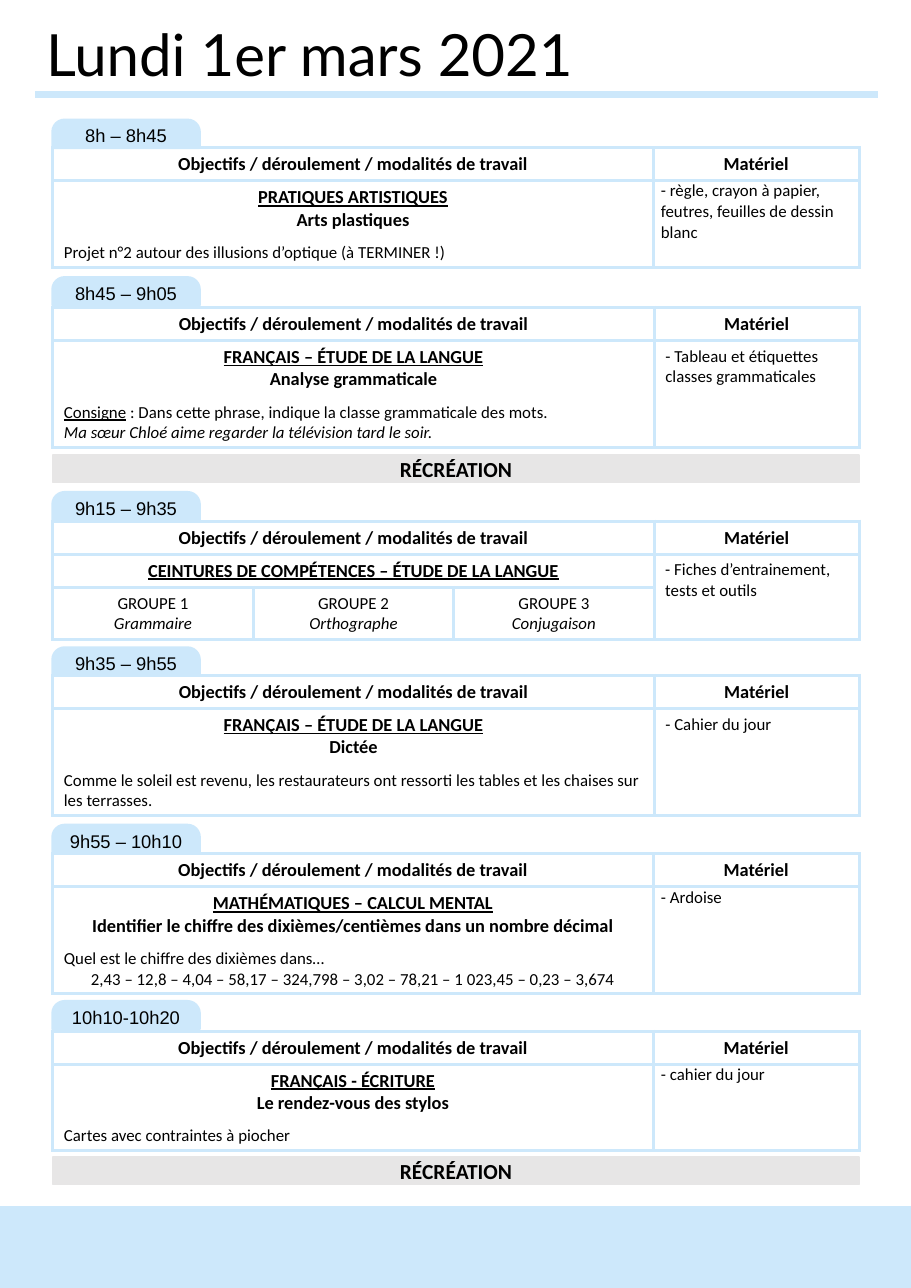
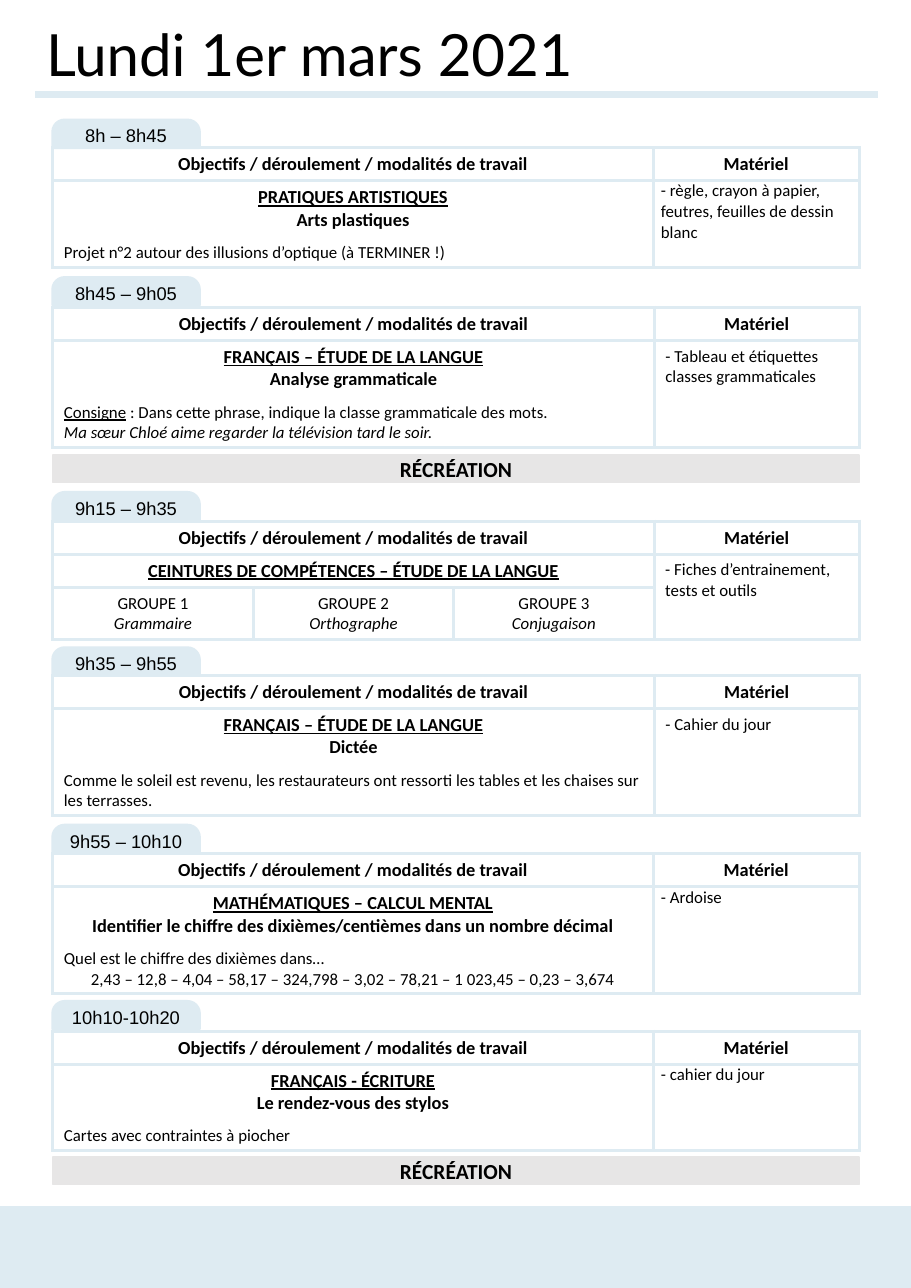
from lxml import etree
from pptx import Presentation
from pptx.dml.color import RGBColor
from pptx.enum.shapes import MSO_CONNECTOR, MSO_SHAPE
from pptx.enum.text import MSO_ANCHOR, MSO_AUTO_SIZE, PP_ALIGN
from pptx.oxml.ns import qn
from pptx.util import Inches, Pt

LEFT, CENTER = PP_ALIGN.LEFT, PP_ALIGN.CENTER
TOP, MIDDLE = MSO_ANCHOR.TOP, MSO_ANCHOR.MIDDLE
RECT, TAB = MSO_SHAPE.RECTANGLE, MSO_SHAPE.ROUND_2_SAME_RECTANGLE

COLORS = {"text": "000000", "paper": "FFFFFF", "break": "E7E6E6"}
ACCENTS = ["CDE8FB", "DEEBF2"]
PAGE_W, PAGE_H = 8.27, 11.69
MARGIN, CONTENT_W = 0.48, 7.32
BAR_H, TAB_W, HEADER_H = 0.25, 1.33, 0.3
GAP = 7.3

TITLE = "Lundi 1er mars 2021"
HEADINGS = ["Objectifs / déroulement / modalités de travail", "Matériel"]
BREAK_TEXT = "RÉCRÉATION"
BREAK_TOPS = [4.13, 10.5]

LESSONS = [
    {"time": "8h – 8h45", "tab": 1.09, "top": 1.34, "height": 1.08, "compact": True,
     "subject": "PRATIQUES ARTISTIQUES", "topic": "Arts plastiques",
     "body": [([("Projet n°2 autour des illusions d’optique (à TERMINER !)", "")], LEFT)],
     "material": "- règle, crayon à papier, feutres, feuilles de dessin blanc"},
    {"time": "8h45 – 9h05", "tab": 2.52, "top": 2.79, "height": 1.27, "compact": False,
     "subject": "FRANÇAIS – ÉTUDE DE LA LANGUE", "topic": "Analyse grammaticale",
     "body": [([("Consigne", "u"),
                (" : Dans cette phrase, indique la classe grammaticale des mots.", "")], LEFT),
              ([("Ma sœur Chloé aime regarder la télévision tard le soir.", "i")], LEFT)],
     "material": "- Tableau et étiquettes classes grammaticales"},
    {"time": "9h35 – 9h55", "tab": 5.88, "top": 6.13, "height": 1.27, "compact": False,
     "subject": "FRANÇAIS – ÉTUDE DE LA LANGUE", "topic": "Dictée",
     "body": [([("Comme le soleil est revenu, les restaurateurs ont ressorti les tables "
                 "et les chaises sur les terrasses.", "")], LEFT)],
     "material": "- Cahier du jour"},
    {"time": "9h55 – 10h10", "tab": 7.49, "top": 7.75, "height": 1.27, "compact": True,
     "subject": "MATHÉMATIQUES – CALCUL MENTAL",
     "topic": "Identifier le chiffre des dixièmes/centièmes dans un nombre décimal",
     "body": [([("Quel est le chiffre des dixièmes dans…", "")], LEFT),
              ([("2,43 – 12,8 – 4,04 – 58,17 – 324,798 – 3,02 – 78,21 – 1 023,45 – 0,23 – 3,674",
                 "")], CENTER)],
     "material": "- Ardoise"},
    {"time": "10h10-10h20", "tab": 9.09, "top": 9.36, "height": 1.08, "compact": True,
     "subject": "FRANÇAIS - ÉCRITURE", "topic": "Le rendez-vous des stylos",
     "body": [([("Cartes avec contraintes à piocher", "")], LEFT)],
     "material": "- cahier du jour"},
]

WORKSHOP = {"time": "9h15 – 9h35", "tab": 4.47, "top": 4.73,
            "subject": "CEINTURES DE COMPÉTENCES – ÉTUDE DE LA LANGUE",
            "groups": [("GROUPE 1", "Grammaire"), ("GROUPE 2", "Orthographe"),
                       ("GROUPE 3", "Conjugaison")],
            "material": "- Fiches d’entrainement, tests et outils"}


def rgb(color):
    return RGBColor.from_string(color)


def add_paragraph(tf, runs, size, align=LEFT, font="Calibri", before=0):
    p = tf.paragraphs[0]
    if p.runs:
        p = tf.add_paragraph()
    p.alignment = align
    p.space_before = Pt(before)
    for text, style in runs:
        r = p.add_run()
        r.text = text
        r.font.name = font
        r.font.size = Pt(size)
        r.font.color.rgb = rgb(COLORS["text"])
        r.font.bold = "b" in style
        r.font.italic = "i" in style
        r.font.underline = "u" in style


def add_block(slide, kind, box, color, line_width):
    sp = slide.shapes.add_shape(kind, *map(Inches, box))
    sp.shadow.inherit = False
    sp.fill.solid()
    sp.fill.fore_color.rgb = rgb(color)
    sp.line.color.rgb = rgb(color)
    sp.line.width = Pt(line_width)
    sp.text_frame.vertical_anchor = MIDDLE
    sp.text_frame.word_wrap = True
    return sp


def add_title(slide, left, top, accent):
    tb = slide.shapes.add_textbox(*map(Inches, (left, top, 6.26, 0.74)))
    tf = tb.text_frame
    tf.word_wrap = True
    tf.auto_size = MSO_AUTO_SIZE.SHAPE_TO_FIT_TEXT
    add_paragraph(tf, [(TITLE, "")], 38, font="Lato")
    y = Inches(top + 0.74)
    rule = slide.shapes.add_connector(
        MSO_CONNECTOR.STRAIGHT, Inches(left), y, Inches(left + 7.65), y)
    rule.line.color.rgb = rgb(accent)
    rule.line.width = Pt(4.75)
    etree.SubElement(rule.element.spPr, qn("a:effectLst"))


def add_time_tab(slide, top, time, accent):
    sp = add_block(slide, TAB, (MARGIN, top, TAB_W, BAR_H), accent, 2)
    sp.adjustments[0] = 0.428
    sp.adjustments[1] = 0
    add_paragraph(sp.text_frame, [(time, "")], 12, CENTER, "Arial")


def add_break(slide, top):
    sp = add_block(slide, RECT, (MARGIN, top, CONTENT_W, BAR_H), COLORS["break"], 1)
    add_paragraph(sp.text_frame, [(BREAK_TEXT, "b")], 14, CENTER)


def style_cell(cell, accent):
    cell.vertical_anchor = MIDDLE
    tcPr = cell._tc.get_or_add_tcPr()
    for side in ("lnL", "lnR", "lnT", "lnB"):
        ln = etree.SubElement(tcPr, qn(f"a:{side}"), w=str(Pt(2.25)))
        fill = etree.SubElement(ln, qn("a:solidFill"))
        etree.SubElement(fill, qn("a:srgbClr"), val=accent)
    cell.fill.solid()
    cell.fill.fore_color.rgb = rgb(COLORS["paper"])


def add_grid(slide, top, widths, heights, accent):
    frame = slide.shapes.add_table(
        len(heights), len(widths),
        *map(Inches, (MARGIN, top, sum(widths), sum(heights))))
    table = frame.table
    table.first_row = False
    table.horz_banding = False
    for column, width in zip(table.columns, widths):
        column.width = Inches(width)
    for row, height in zip(table.rows, heights):
        row.height = Inches(height)
        for cell in row.cells:
            style_cell(cell, accent)
    for col, heading in zip((0, len(widths) - 1), HEADINGS):
        add_paragraph(table.cell(0, col).text_frame, [(heading, "b")], 12, CENTER)
    return table


def add_material(cell, text, compact=False):
    cell.vertical_anchor = TOP
    if compact:
        cell.margin_left = cell.margin_right = Inches(0.07)
        cell.margin_top = cell.margin_bottom = 0
    add_paragraph(cell.text_frame, [(text, "")], 11)


def add_lesson(slide, lesson, accent):
    material_w = 1.87 if lesson["compact"] else 1.86
    table = add_grid(slide, lesson["top"], [CONTENT_W - material_w, material_w],
                     [HEADER_H, lesson["height"] - HEADER_H], accent)
    tf = table.cell(1, 0).text_frame
    add_paragraph(tf, [(lesson["subject"], "bu")], 12, CENTER)
    add_paragraph(tf, [(lesson["topic"], "b")], 12, CENTER)
    for i, (runs, align) in enumerate(lesson["body"]):
        add_paragraph(tf, runs, 11, align, before=0 if i else GAP)
    add_material(table.cell(1, 1), lesson["material"], lesson["compact"])
    add_time_tab(slide, lesson["tab"], lesson["time"], accent)


def add_workshop(slide, workshop, accent):
    groups = workshop["groups"]
    count = len(groups)
    material_w = 1.86
    group_w = (CONTENT_W - material_w) / count
    table = add_grid(slide, workshop["top"], [group_w] * count + [material_w],
                     [HEADER_H, 0.3, 0.47], accent)
    for row in (0, 1):
        table.cell(row, 0).merge(table.cell(row, count - 1))
    table.cell(1, count).merge(table.cell(2, count))
    subject = table.cell(1, 0)
    subject.vertical_anchor = TOP
    add_paragraph(subject.text_frame, [(workshop["subject"], "bu")], 12, CENTER)
    for col, (name, topic) in enumerate(groups):
        tf = table.cell(2, col).text_frame
        add_paragraph(tf, [(name, "")], 11, CENTER)
        add_paragraph(tf, [(topic, "i")], 11, CENTER)
    add_material(table.cell(1, count), workshop["material"])
    add_time_tab(slide, workshop["tab"], workshop["time"], accent)


def add_day(prs, accent):
    slide = prs.slides.add_slide(prs.slide_layouts[6])
    add_title(slide, 0.32, 0.12, accent)
    add_block(slide, RECT, (0, 10.95, PAGE_W, 0.74), accent, 1)
    for lesson in LESSONS:
        add_lesson(slide, lesson, accent)
    add_workshop(slide, WORKSHOP, accent)
    for top in BREAK_TOPS:
        add_break(slide, top)


def main():
    prs = Presentation()
    prs.slide_width = Inches(PAGE_W)
    prs.slide_height = Inches(PAGE_H)
    for accent in ACCENTS:
        add_day(prs, accent)
    prs.save("out.pptx")


if __name__ == "__main__":
    main()
